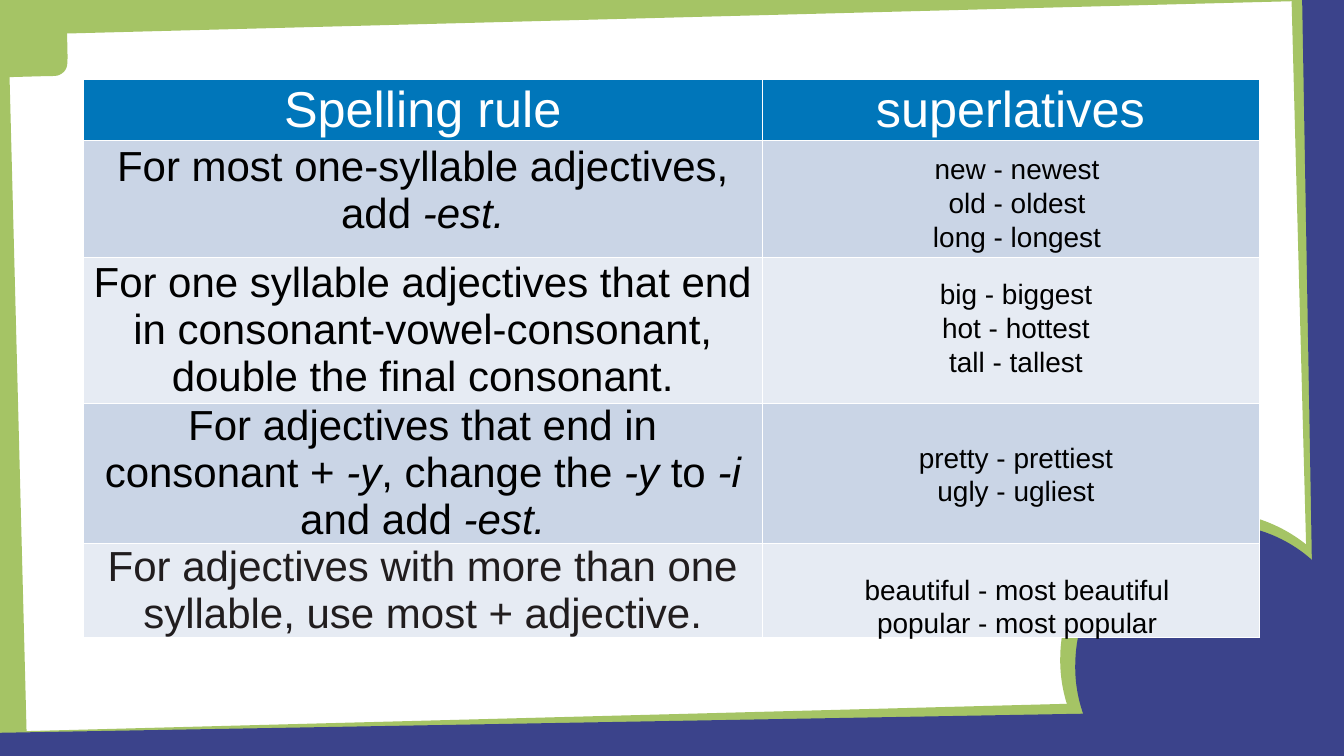
import pptx
import pptx.util
import pptx.dml.color
import pptx.enum.text
import pptx.oxml
import pptx.oxml.ns
import lxml.etree

COLORS = {"green": "A5C465", "blue": "3B438B", "header": "0076BA", "dark_band": "CAD5E6",
          "light_band": "E6EBF3", "white": "FFFFFF", "black": "000000", "soft_black": "211D1E"}
FONT = "Arial"
WIDTH, HEIGHT = 26.67, 15  # all lengths below are in inches

# Backdrop outlines: a pair is a corner, six numbers are a Bezier curve
BACKDROP = [
    ("green", [(23.98, 10.14), (23.21, 10.15, 22.45, 10.45, 21.87, 11.04),
               (21.33, 11.6, 21.05, 12.31, 21.04, 13.02),
               (21.02, 13.73, 21.26, 14.44, 21.75, 15), (WIDTH, 15), (WIDTH, 11.67),
               (26.51, 11.42, 26.33, 11.18, 26.11, 10.97),
               (25.51, 10.4, 24.74, 10.14, 23.98, 10.14)]),
    ("green", [(25.63, 0), (26.03, 15), (26.47, 15), (26.07, 0)]),
    ("green", [(0, 0), (0, 1.52), (0.05, 1.53, 0.12, 1.53, 0.22, 1.53), (0.93, 1.51),
               (1.05, 1.51, 1.13, 1.51, 1.17, 1.49), (1.24, 1.46, 1.3, 1.41, 1.32, 1.34),
               (1.34, 1.29, 1.34, 1.21, 1.34, 1.09), (1.32, 0.14),
               (1.32, 0.08, 1.32, 0.04, 1.32, 0)]),
    ("green", [(0, 0), (0, 0.7), (26.56, 0)]),
    ("green", [(WIDTH, 13.82), (0, 14.52), (0, 14.87), (WIDTH, 14.18)]),
    ("green", [(0, 0), (0, 15), (0.54, 15), (0.15, 0)]),
    ("blue", [(25.84, 0), (26.1, 15), (WIDTH, 15), (WIDTH, 0)]),
    ("blue", [(WIDTH, 14.07), (0, 14.54), (0, 15), (WIDTH, 15)]),
    ("blue", [(24.1, 10.39), (23.38, 10.41, 22.66, 10.69, 22.12, 11.25),
              (21.62, 11.77, 21.36, 12.44, 21.34, 13.11),
              (21.31, 13.78, 21.52, 14.46, 21.97, 15), (26.39, 14.92),
              (26.51, 14.76, 26.61, 14.59, WIDTH, 14.42), (WIDTH, 11.92),
              (26.52, 11.66, 26.34, 11.41, 26.11, 11.18),
              (25.55, 10.64, 24.82, 10.39, 24.1, 10.39)]),
]

# Rules: row height, text colour, side margin, top margin, runs as (text, italic)
HEADERS = ["Spelling rule", "superlatives"]
HEADER_HEIGHT = 1.21
RULES = [
    (2.31, "black", 0.1, 0.05,
     [("For most one-syllable adjectives, add", False), (" -est.", True)]),
    (2.89, "black", 0.1, 0.05,
     [("For one syllable adjectives that end in consonant-vowel-consonant, "
       "double the final consonant.", False)]),
    (2.77, "black", 0.05, 0,
     [("For adjectives that end in consonant + ", False), ("-y", True),
      (", change the ", False), ("-y", True), (" to ", False), ("-i", True),
      (" and add ", False), ("-est.", True)]),
    (1.86, "soft_black", 0.05, 0,
     [("For adjectives with more than one syllable, use most + adjective.", False)]),
]
TABLE_LEFT, TABLE_TOP = 1.66, 1.57
COLUMNS = [13.46, 9.86]

# Examples: left, top, width, height, lines
EXAMPLES = [
    (15.02, 2.95, 10.32, 2.13, ["new - newest", "old - oldest", "long - longest"]),
    (15.56, 8.67, 9.2, 1.46, ["pretty - prettiest", "ugly - ugliest"]),
    (15.02, 11.29, 10.32, 1.46, ["beautiful - most beautiful", "popular - most popular"]),
    (15, 5.43, 10.32, 2.13, ["big - biggest", "hot - hottest", "tall - tallest"]),
]


def length(inches):
    return pptx.util.Cm(inches * 2.54)


def color(name):
    return pptx.dml.color.RGBColor.from_string(COLORS[name])


def bend(shape, outline):
    """Turn each run of three segments that stands for a curve into one Bezier segment."""
    segments = iter(list(shape.element.iter(pptx.oxml.ns.qn("a:lnTo"))))
    for part in outline[1:]:
        segment = next(segments)
        if len(part) == 6:
            curve = lxml.etree.Element(pptx.oxml.ns.qn("a:cubicBezTo"))
            segment.addprevious(curve)
            for piece in (segment, next(segments), next(segments)):
                curve.append(piece[0])
                piece.getparent().remove(piece)


def add_outline(slide, fill, outline):
    points = [(length(part[i]), length(part[i + 1]))
              for part in outline for i in range(0, len(part), 2)]
    builder = slide.shapes.build_freeform(*points[0])
    builder.add_line_segments(points[1:], close=True)
    shape = builder.convert_to_shape()
    bend(shape, outline)
    shape.shadow.inherit = False
    shape.fill.solid()
    shape.fill.fore_color.rgb = color(fill)
    shape.line.fill.background()


def write(paragraph, runs, size, ink):
    paragraph.alignment = pptx.enum.text.PP_ALIGN.CENTER
    for text, italic in runs:
        run = paragraph.add_run()
        run.text = text
        run.font.name = FONT
        run.font.size = pptx.util.Pt(size)
        run.font.bold = False
        run.font.italic = italic
        run.font.color.rgb = color(ink)


def format_cell(cell, fill, side, top, borders):
    cell.margin_left = cell.margin_right = length(side)
    cell.margin_top = cell.margin_bottom = length(top)
    properties = cell._tc.get_or_add_tcPr()
    for edge, points in zip("LRTB", borders):
        properties.append(pptx.oxml.parse_xml(
            f'<a:ln{edge} {pptx.oxml.ns.nsdecls("a")} w="{pptx.util.Pt(points)}"><a:solidFill>'
            f'<a:srgbClr val="{COLORS["white"]}"/></a:solidFill></a:ln{edge}>'))
    cell.fill.solid()
    cell.fill.fore_color.rgb = color(fill)


def add_rules_table(slide):
    heights = [HEADER_HEIGHT] + [rule[0] for rule in RULES]
    table = slide.shapes.add_table(
        len(heights), len(COLUMNS), length(TABLE_LEFT), length(TABLE_TOP),
        length(sum(COLUMNS)), length(sum(heights))).table
    for column, width in zip(table.columns, COLUMNS):
        column.width = length(width)
    for row, height in zip(table.rows, heights):
        row.height = length(height)
    for index, header in enumerate(HEADERS):
        cell = table.cell(0, index)
        format_cell(cell, "header", 0.1, 0.05, (1, 1, 1, 3))
        write(cell.text_frame.paragraphs[0], [(header, False)], 72, "white")
    for index, (_, ink, side, top, runs) in enumerate(RULES, start=1):
        band = "dark_band" if index % 2 else "light_band"
        for cell in table.rows[index].cells:
            format_cell(cell, band, side, top, (1, 1, 3 if index == 1 else 1, 1))
        write(table.cell(index, 0).text_frame.paragraphs[0], runs, 60, ink)


def add_examples(slide, left, top, width, height, lines):
    frame = slide.shapes.add_textbox(*map(length, (left, top, width, height))).text_frame
    frame.word_wrap = True
    frame.vertical_anchor = pptx.enum.text.MSO_ANCHOR.MIDDLE
    frame.margin_left = frame.margin_right = length(0.06)
    frame.margin_top = frame.margin_bottom = length(0.06)
    for index, line in enumerate(lines):
        paragraph = frame.add_paragraph() if index else frame.paragraphs[0]
        write(paragraph, [(line, False)], 40, "black")


def main():
    presentation = pptx.Presentation()
    presentation.slide_width, presentation.slide_height = length(WIDTH), length(HEIGHT)
    slide = presentation.slides.add_slide(presentation.slide_layouts[6])
    for fill, outline in BACKDROP:
        add_outline(slide, fill, outline)
    add_rules_table(slide)
    for example in EXAMPLES:
        add_examples(slide, *example)
    presentation.save("out.pptx")


if __name__ == "__main__":
    main()
